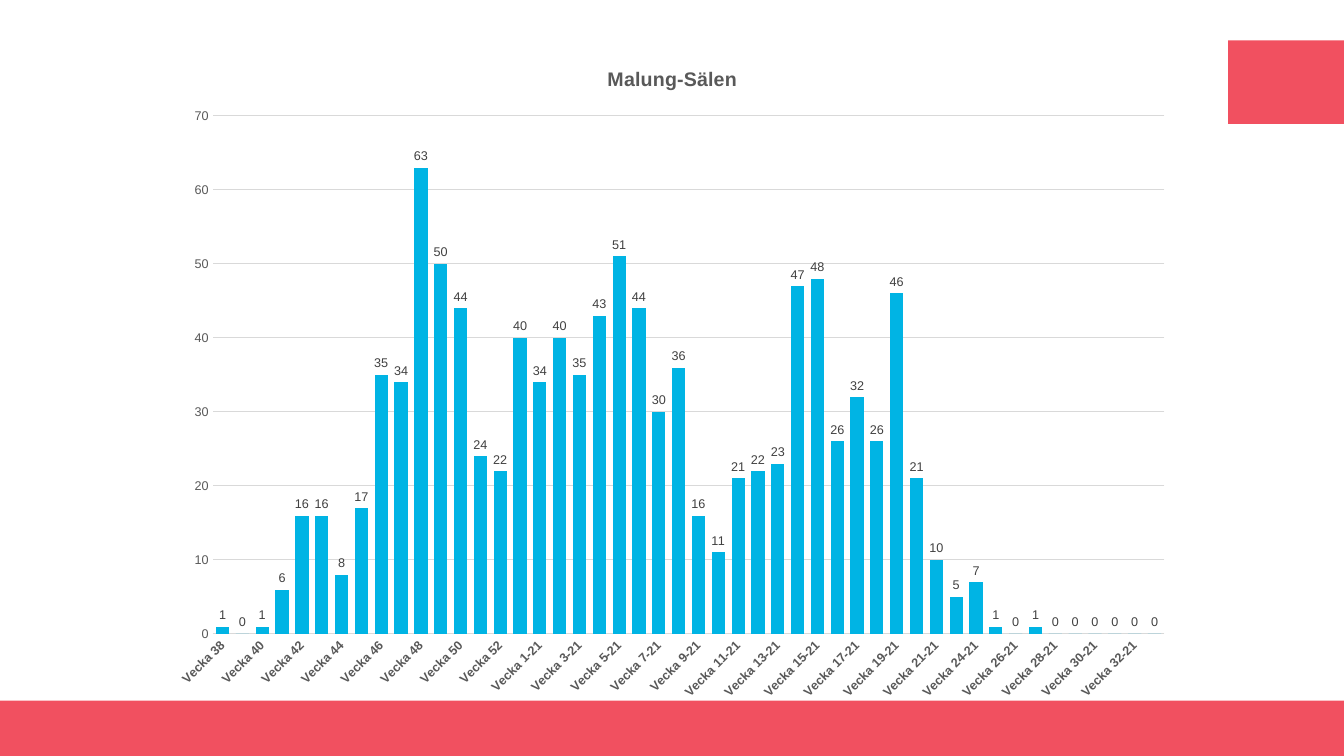
from lxml import etree
from pptx import Presentation
from pptx.chart.data import CategoryChartData
from pptx.dml.color import RGBColor
from pptx.enum.chart import XL_CHART_TYPE as ChartType, XL_LABEL_POSITION as LabelPosition, XL_TICK_MARK as TickMark
from pptx.enum.shapes import MSO_SHAPE as Preset
from pptx.oxml.ns import qn
from pptx.util import Inches, Pt

COLORS = {"band": "F15060", "bars": "00B4E4", "grid": "D9D9D9",
          "axis": "595959", "labels": "404040"}
FONT = "Arial"
TITLE = "Malung-Sälen"
WEEKS_2020 = [f"Vecka {week}" for week in range(38, 54)]
WEEKS_2021 = [f"Vecka {week}-21" for week in range(1, 34) if week != 23]
CASES_2020 = [1, 0, 1, 6, 16, 16, 8, 17, 35, 34, 63, 50, 44, 24, 22, 40]
CASES_2021 = [34, 40, 35, 43, 51, 44, 30, 36, 16, 11, 21, 22, 23, 47, 48, 26,
              32, 26, 46, 21, 10, 5, 7, 1, 0, 1, 0, 0, 0, 0, 0, 0]

BANDS = [(0, 6.95, 13.33, 0.55), (12.18, 0.4, 1.15, 0.83)]
CHART_BOX = (1.58, 0.42, 10.18, 6.65)
TITLE_AT = {"x": 4.41, "y": 0.2}
PLOT_AT = {"x": 0.53, "y": 0.73, "w": 9.44, "h": 5.14}
AXIS_SCALE = {"minimum_scale": 0, "maximum_scale": 70, "major_unit": 10}


def rgb(name):
    return RGBColor.from_string(COLORS[name])


def style_font(font, size, color, bold=False):
    for key, value in {"name": FONT, "size": Pt(size), "bold": bold}.items():
        setattr(font, key, value)
    font.color.rgb = rgb(color)


def style_line(line):
    line.color.rgb = rgb("grid")
    line.width = Pt(0.75)


def place(part, index, inches, modes):
    for old in part.findall(qn("c:layout")):
        part.remove(old)
    width, height = CHART_BOX[2:]
    shares = {key: length / (width if key in "xw" else height)
              for key, length in inches.items()}
    layout = etree.Element(qn("c:layout"))
    manual = etree.SubElement(layout, qn("c:manualLayout"))
    for key, value in {**modes, "xMode": "edge", "yMode": "edge", **shares}.items():
        etree.SubElement(manual, qn(f"c:{key}")).set("val", str(value))
    part.insert(index, layout)


def add_band(slide, box):
    band = slide.shapes.add_shape(Preset.RECTANGLE, *map(Inches, box))
    band.shadow.inherit = False
    band.fill.solid()
    band.fill.fore_color.rgb = rgb("band")
    band.line.fill.background()


def add_cases_chart(slide):
    cases = CategoryChartData()
    cases.categories = WEEKS_2020 + WEEKS_2021
    cases.add_series("Series 1", CASES_2020 + CASES_2021)
    chart = slide.shapes.add_chart(
        ChartType.COLUMN_CLUSTERED, *map(Inches, CHART_BOX), cases).chart
    chart.has_legend = False
    chart.font.name = FONT
    chart.font.size = Pt(10)

    title = chart.chart_title
    title.text_frame.text = TITLE
    style_font(title.text_frame.paragraphs[0].runs[0].font, 14, "axis", True)
    place(title._element, 1, TITLE_AT, {})

    plot = chart.plots[0]
    for key, value in {"gap_width": 50, "overlap": -27,
                       "vary_by_categories": False, "has_data_labels": True}.items():
        setattr(plot, key, value)
    place(plot._element.getparent(), 0, PLOT_AT, {"layoutTarget": "inner"})
    bars = plot.series[0].format.fill
    bars.solid()
    bars.fore_color.rgb = rgb("bars")
    labels = plot.data_labels
    labels.show_value = True
    labels.position = LabelPosition.OUTSIDE_END
    style_font(labels.font, 9, "labels")

    weeks, counts = chart.category_axis, chart.value_axis
    for axis, bold in ((weeks, True), (counts, False)):
        axis.major_tick_mark = axis.minor_tick_mark = TickMark.NONE
        style_font(axis.tick_labels.font, 9, "axis", bold)
    style_line(weeks.format.line)
    weeks._element.find(qn("c:txPr")).find(qn("a:bodyPr")).set("rot", "-2700000")
    for key, value in AXIS_SCALE.items():
        setattr(counts, key, value)
    counts.format.line.fill.background()
    style_line(counts.major_gridlines.format.line)


def main():
    deck = Presentation()
    deck.slide_width, deck.slide_height = Inches(13.33), Inches(7.5)
    slide = deck.slides.add_slide(deck.slide_layouts[6])
    for box in BANDS:
        add_band(slide, box)
    add_cases_chart(slide)
    deck.save("out.pptx")


if __name__ == "__main__":
    main()
